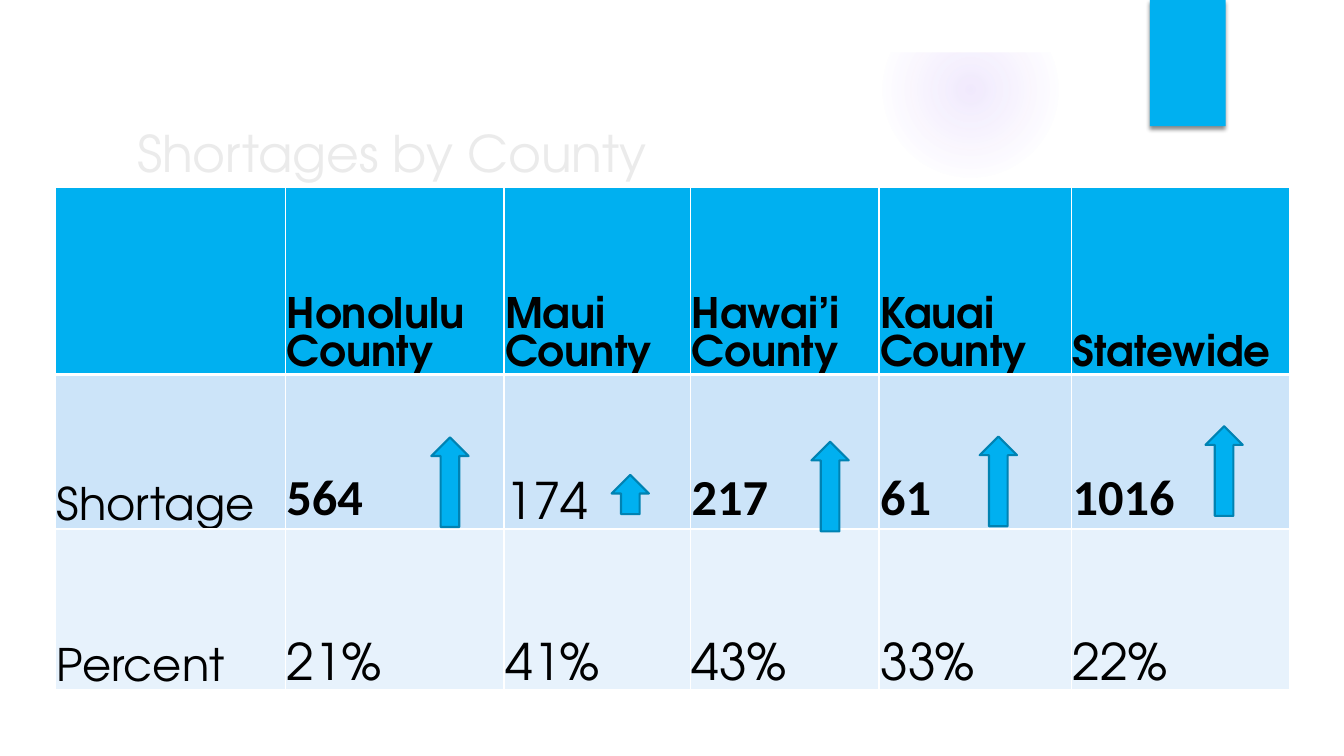
from lxml.etree import SubElement
from pptx import Presentation
from pptx.dml.color import RGBColor
from pptx.enum.shapes import MSO_SHAPE
from pptx.enum.text import MSO_ANCHOR, MSO_AUTO_SIZE, PP_ALIGN
from pptx.oxml.ns import qn
from pptx.util import Cm, Pt

COLOURS = {
    "accent": "00B0F0",
    "accent_edge": "0082B2",
    "glow": "9B6BF2",
    "title": "EBEBEB",
    "text": "000000",
    "paper": "FFFFFF",
    "shortage_row": "CCE4F9",
    "percent_row": "E7F2FC",
}
DISPLAY_FONT, FIGURE_FONT = "TeX Gyre Adventor", "Calibri"
COLUMN_WIDTHS = [5.79, 5.51, 4.7, 4.75, 4.85, 5.49]
ROW_HEIGHTS = [4.72, 3.89, 4.06]
ROW_FILLS = ["accent", "shortage_row", "percent_row"]
ROWS = [
    ["", "Honolulu County", "Maui\nCounty", "Hawai’i\nCounty", "Kauai County", "Statewide"],
    ["Shortage", "564", "174", "217", "61", "1016"],
    ["Percent", "21%", "41%", "43%", "33%", "22%"],
]
HEADER_FORMAT = {"size": Pt(30), "name": DISPLAY_FONT, "bold": True}
LABEL_FORMAT = {"size": Pt(32), "name": DISPLAY_FONT, "bold": False}
VALUE_FORMAT = {"size": Pt(36), "name": DISPLAY_FONT, "bold": False}
RISING_FORMAT = {"size": Pt(36), "name": FIGURE_FONT, "bold": True}
TALL_ARROW, SHORT_ARROW, ARROW_WIDTH = 2.26, 0.99, 0.94
ARROWS = [
    (10.21, 11.68, TALL_ARROW),
    (15.39, 11.99, SHORT_ARROW),
    (19.79, 11.79, TALL_ARROW),
    (24.03, 11.66, TALL_ARROW),
    (29.72, 11.4, TALL_ARROW),
]


def colour(name):
    return RGBColor.from_string(COLOURS[name])


def set_attributes(target, values):
    for name, value in values.items():
        setattr(target, name, value)


def style_font(font, values, colour_name):
    set_attributes(font, values)
    font.color.rgb = colour(colour_name)


def add_plain_shape(slide, kind, bounds, fill):
    shape = slide.shapes.add_shape(kind, *[Cm(length) for length in bounds])
    shape.fill.solid()
    shape.fill.fore_color.rgb = colour(fill)
    shape.line.fill.background()
    shape.shadow.inherit = False
    return shape


def add_colour(parent, name, opacity):
    node = SubElement(parent, qn("a:srgbClr"), val=COLOURS[name])
    SubElement(node, qn("a:alpha"), val=str(opacity * 1000))


def add_glow(slide):
    """Add a soft round glow, cut off by the page's top margin."""
    glow = add_plain_shape(slide, MSO_SHAPE.OVAL, (22.23, 0.03, 4.45, 4.45), "glow")
    glow.fill.gradient()
    gradient = glow._element.spPr.find(qn("a:gradFill"))
    for child in list(gradient):
        gradient.remove(child)
    stops = SubElement(gradient, qn("a:gsLst"))
    for position, opacity in ((0, 14), (36, 7), (73, 0)):
        stop = SubElement(stops, qn("a:gs"), pos=str(position * 1000))
        add_colour(stop, "glow", opacity)
    circle = SubElement(gradient, qn("a:path"), attrib={"path": "circle"})
    SubElement(circle, qn("a:fillToRect"), l="50000", t="50000", r="50000", b="50000")
    add_plain_shape(slide, MSO_SHAPE.RECTANGLE, (22.23, 0, 4.45, 1.32), "paper")


def add_tab(slide):
    tab = add_plain_shape(slide, MSO_SHAPE.RECTANGLE, (28.98, 0, 1.91, 3.18), "accent")
    effects = tab._element.spPr.find(qn("a:effectLst"))
    shadow = SubElement(effects, qn("a:outerShdw"), blurRad=str(Pt(3)), dist=str(Pt(2)),
                        dir="5400000", rotWithShape="0")
    add_colour(shadow, "text", 45)


def fill_title(slide):
    title = slide.shapes.title
    set_attributes(title, {"left": Cm(3.2), "top": Cm(2.69),
                           "width": Cm(24.33), "height": Cm(1.96)})
    frame = title.text_frame
    frame.text = "Shortages by County"
    set_attributes(frame, {"auto_size": MSO_AUTO_SIZE.NONE, "word_wrap": True,
                           "vertical_anchor": MSO_ANCHOR.MIDDLE, "margin_top": Cm(0.48)})
    para = frame.paragraphs[0]
    para.alignment = PP_ALIGN.LEFT
    style_font(para.runs[0].font, VALUE_FORMAT, "title")


def add_borders(cell, bottom_width):
    properties = cell._tc.get_or_add_tcPr()
    for side, width in (("L", 1), ("R", 1), ("T", 1), ("B", bottom_width)):
        line = SubElement(properties, qn(f"a:ln{side}"), w=str(Pt(width)))
        fill = SubElement(line, qn("a:solidFill"))
        SubElement(fill, qn("a:srgbClr"), val=COLOURS["paper"])


def cell_format(row, column):
    if row == 0:
        return HEADER_FORMAT
    if column == 0:
        return LABEL_FORMAT
    return RISING_FORMAT if row == 1 and column != 2 else VALUE_FORMAT


def add_county_table(slide):
    table = slide.shapes.add_table(
        len(ROWS), len(COLUMN_WIDTHS), Cm(1.4), Cm(4.72),
        Cm(sum(COLUMN_WIDTHS)), Cm(sum(ROW_HEIGHTS))).table
    set_attributes(table, {"first_row": False, "horz_banding": False})
    for column, width in zip(table.columns, COLUMN_WIDTHS):
        column.width = Cm(width)
    for row_index, words in enumerate(ROWS):
        table.rows[row_index].height = Cm(ROW_HEIGHTS[row_index])
        for column_index, text in enumerate(words):
            cell = table.cell(row_index, column_index)
            add_borders(cell, 3 if row_index == 0 else 1)
            cell.fill.solid()
            cell.fill.fore_color.rgb = colour(ROW_FILLS[row_index])
            set_attributes(cell, {"vertical_anchor": MSO_ANCHOR.BOTTOM,
                                  "margin_left": Cm(0.03), "margin_right": Cm(0.03),
                                  "margin_top": Cm(0.03), "margin_bottom": 0})
            cell.text = text
            for para in cell.text_frame.paragraphs:
                for span in para.runs:
                    style_font(span.font, cell_format(row_index, column_index), "text")


def add_up_arrow(slide, left, top, length):
    arrow = add_plain_shape(slide, MSO_SHAPE.RIGHT_ARROW,
                            (left, top, length, ARROW_WIDTH), "accent")
    arrow.rotation = 270
    arrow.line.color.rgb = colour("accent_edge")
    arrow.line.width = Pt(1.5)


def main():
    deck = Presentation()
    set_attributes(deck, {"slide_width": Cm(33.87), "slide_height": Cm(19.05)})
    slide = deck.slides.add_slide(deck.slide_layouts[5])
    add_glow(slide)
    add_tab(slide)
    fill_title(slide)
    add_county_table(slide)
    for left, top, length in ARROWS:
        add_up_arrow(slide, left, top, length)
    deck.save("out.pptx")


if __name__ == "__main__":
    main()
